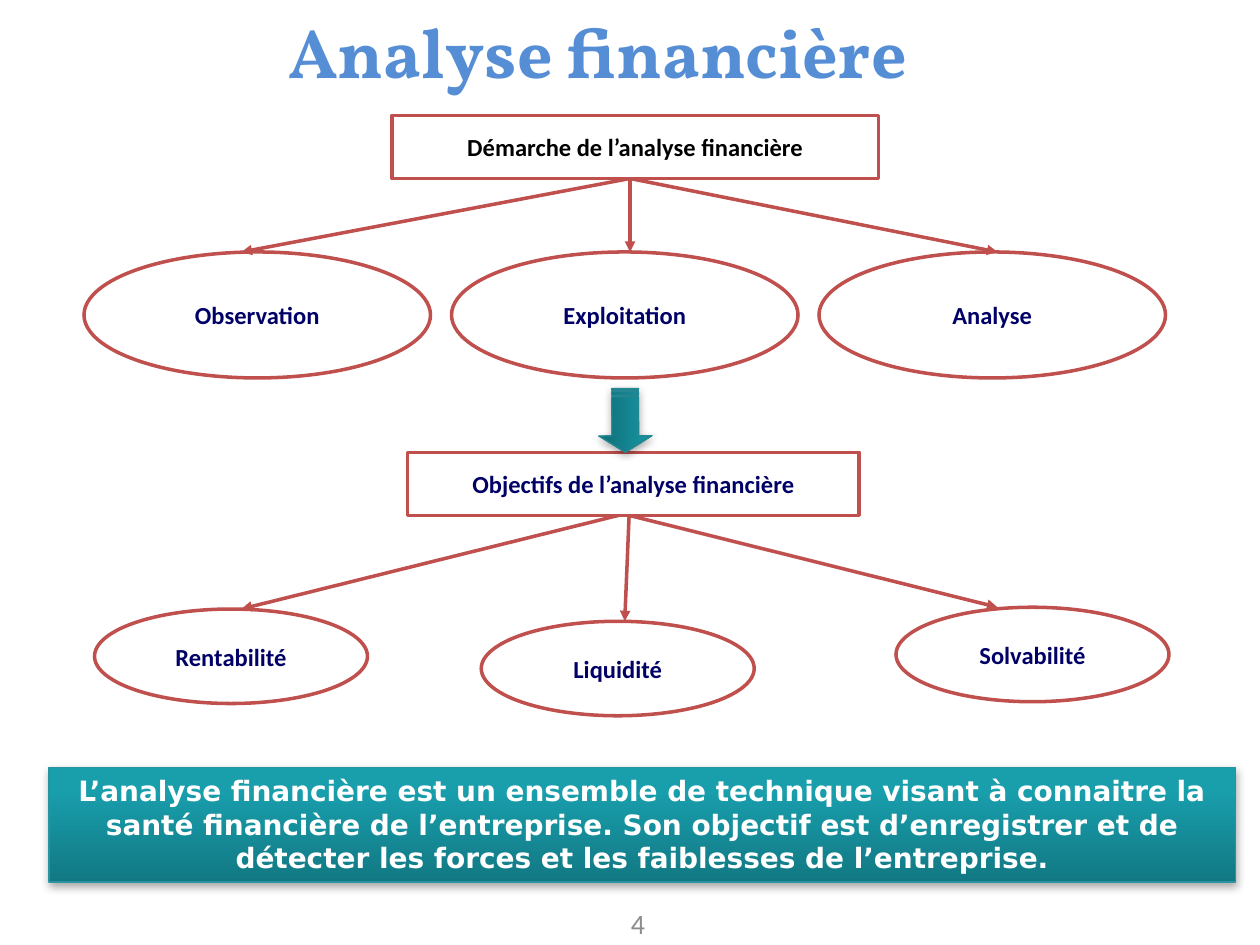
"""Build the slide on the steps and goals of financial analysis."""
from copy import deepcopy

from lxml.etree import SubElement
from pptx import Presentation
from pptx.dml.color import RGBColor
from pptx.enum.shapes import MSO_CONNECTOR, MSO_SHAPE
from pptx.enum.text import MSO_ANCHOR, PP_ALIGN
from pptx.oxml.ns import qn
from pptx.util import Pt

HUES = {"line": "C0504D", "navy": "000066", "black": "000000", "white": "FFFFFF",
        "title": "558ED5", "page": "8C8C8C", "edge": "28949F", "rim": "238690"}
BAND = [(0, "117883"), (0.8, "199EAC"), (1, "17A1AF")]
DART = [(0, "0E6C76"), (0.8, "168F9C"), (1, "14929F")]

TITLE = "Analyse financière"
STEPS = ["Observation", "Exploitation", "Analyse"]
GOALS = [("Rentabilité", 54, 348), ("Liquidité", 275, 355), ("Solvabilité", 512, 347)]
HEADS = [("Démarche de l’analyse financière", "black", (224, 66, 278, 36)),
         ("Objectifs de l’analyse financière", "navy", (233, 258.5, 258, 36))]
RAYS = [((360, 102), (360, 144)), ((360, 102), (138, 144)), ((360, 102), (570, 144)),
        ((353.5, 294.5), (138, 348)), ((359.5, 294.5), (357, 355)),
        ((359.5, 294.5), (570, 347))]
NOTE = ("L’analyse financière est un ensemble de technique visant à connaitre la santé "
        "financière de l’entreprise. Son objectif est d’enregistrer et de détecter les "
        "forces et les faiblesses de l’entreprise.")


def tint(name):
    return RGBColor.from_string(HUES[name])


def write(shape, text, size, face, hue, bold=True, wrap=True,
          anchor=MSO_ANCHOR.MIDDLE, align=PP_ALIGN.CENTER):
    frame = shape.text_frame
    frame.word_wrap = wrap
    frame.vertical_anchor = anchor
    para = frame.paragraphs[0]
    para.text = text
    para.alignment = align
    font = para.font
    font.size, font.name, font.bold = Pt(size), face, bold
    font.color.rgb = tint(hue)


def shade(shape, stops, edge):
    fill = shape.fill
    fill.gradient()
    fill.gradient_angle = 90
    last = fill.gradient_stops[1]._gs
    last.addnext(deepcopy(last))
    for stop, (place, code) in zip(fill.gradient_stops, stops):
        stop.position = place
        stop.color.rgb = RGBColor.from_string(code)
    shape.line.color.rgb = tint(edge)
    shape.line.width = Pt(0.75)
    shape.shadow.inherit = False
    effects = shape._element.spPr.find(qn("a:effectLst"))
    glow = SubElement(effects, qn("a:outerShdw"), blurRad=str(Pt(5)), dist=str(Pt(1.8)),
                      dir="5400000", rotWithShape="0")
    black = SubElement(glow, qn("a:srgbClr"), val=HUES["black"])
    SubElement(black, qn("a:alpha"), val="35000")


def node(shapes, kind, box, text, hue="navy"):
    shape = shapes.add_shape(kind, *map(Pt, box))
    shape.shadow.inherit = False
    shape.fill.solid()
    shape.fill.fore_color.rgb = tint("white")
    shape.line.color.rgb = tint("line")
    shape.line.width = Pt(2)
    write(shape, text, 14, "Calibri", hue, wrap=False)


def ray(shapes, start, end):
    link = shapes.add_connector(MSO_CONNECTOR.STRAIGHT, *map(Pt, start + end))
    link.line.color.rgb = tint("line")
    link.line.width = Pt(2)
    SubElement(link.line._get_or_add_ln(), qn("a:tailEnd"), type="triangle")
    SubElement(link._element.spPr, qn("a:effectLst"))


def main():
    deck = Presentation()
    deck.slide_width, deck.slide_height = Pt(720), Pt(540)
    shapes = deck.slides.add_slide(deck.slide_layouts[6]).shapes

    for i, text in enumerate(STEPS):
        node(shapes, MSO_SHAPE.OVAL, (48 + 210 * i, 144, 198, 72), text)
    for text, left, top in GOALS:
        node(shapes, MSO_SHAPE.OVAL, (left, top, 156, 54), text)
    for start, end in RAYS:
        ray(shapes, start, end)
    for text, hue, box in HEADS:
        node(shapes, MSO_SHAPE.RECTANGLE, box, text, hue)

    dart = shapes.add_shape(MSO_SHAPE.STRIPED_RIGHT_ARROW, *map(Pt, (339, 225, 36.5, 30.5)))
    dart.rotation = 89.7
    dart.adjustments[0], dart.adjustments[1] = 0.5, 0.31
    shade(dart, DART, "rim")

    band = shapes.add_shape(MSO_SHAPE.RECTANGLE, *map(Pt, (28, 438.5, 678, 65.5)))
    shade(band, BAND, "edge")
    write(band, NOTE, 16, "DejaVu Sans", "white", anchor=MSO_ANCHOR.TOP)

    title = shapes.add_textbox(*map(Pt, (25, 1.5, 633, 45)))
    write(title, TITLE, 40, "Vollkorn", "title", anchor=MSO_ANCHOR.TOP)

    page = shapes.add_textbox(*map(Pt, (258.5, 515, 228, 25)))
    write(page, "4", 16, "Calibri", "page", bold=False, align=PP_ALIGN.LEFT)
    page.text_frame.margin_left = Pt(102)

    deck.save("out.pptx")


if __name__ == "__main__":
    main()
